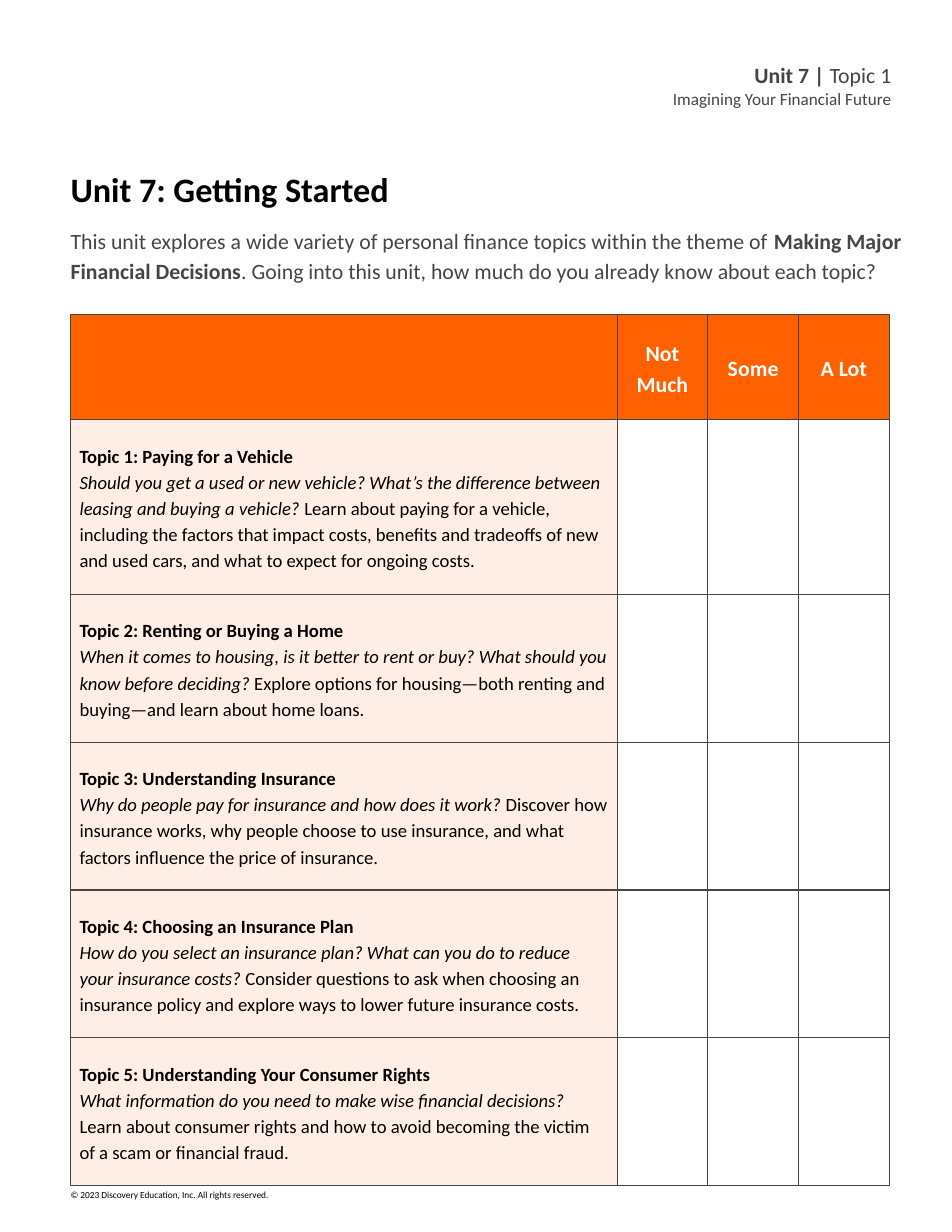
from lxml import etree
from pptx import Presentation
from pptx.dml.color import RGBColor
from pptx.enum.text import MSO_ANCHOR, PP_ALIGN
from pptx.oxml.ns import qn
from pptx.util import Inches, Pt

LEFT, RIGHT, CENTER = PP_ALIGN.LEFT, PP_ALIGN.RIGHT, PP_ALIGN.CENTER
JUSTIFY = PP_ALIGN.JUSTIFY
TOP, MIDDLE = MSO_ANCHOR.TOP, MSO_ANCHOR.MIDDLE

FONT = "Calibri"
GRAY, BLACK, WHITE, ORANGE = "454545", "000000", "FFFFFF", "FF6000"
MARGIN = 0.63
SPACING = 1.15

RATINGS = ["Not Much", "Some", "A Lot"]
TOPICS = [
    ("Paying for a Vehicle",
     "Should you get a used or new vehicle? What’s the difference between "
     "leasing and buying a vehicle? ",
     "Learn about paying for a vehicle, including the factors that impact "
     "costs, benefits and tradeoffs of new and used cars, and what to expect "
     "for ongoing costs."),
    ("Renting or Buying a Home",
     "When it comes to housing, is it better to rent or buy? What should you "
     "know before deciding? ",
     "Explore options for housing—both renting and buying—and learn about "
     "home loans."),
    ("Understanding Insurance",
     "Why do people pay for insurance and how does it work? ",
     "Discover how insurance works, why people choose to use insurance, and "
     "what factors influence the price of insurance."),
    ("Choosing an Insurance Plan",
     "How do you select an insurance plan? What can you do to reduce your "
     "insurance costs? ",
     "Consider questions to ask when choosing an insurance policy and explore "
     "ways to lower future insurance costs."),
    ("Understanding Your Consumer Rights",
     "What information do you need to make wise financial decisions? ",
     "Learn about consumer rights and how to avoid becoming the victim of a "
     "scam or financial fraud."),
]


def color(code):
    return RGBColor.from_string(code)


def add_run(para, text, size, code, bold=False, italic=False):
    run = para.add_run()
    run.text = text
    font = run.font
    font.name, font.size = FONT, Pt(size)
    font.bold, font.italic = bold, italic
    font.color.rgb = color(code)


def add_frame(slide, box, anchor=TOP):
    frame = slide.shapes.add_textbox(*map(Inches, box)).text_frame
    frame.word_wrap = True
    frame.vertical_anchor = anchor
    frame.margin_left = frame.margin_right = 0
    frame.margin_top = frame.margin_bottom = 0
    return frame


def set_para(para, align=LEFT, spacing=None):
    para.alignment = align
    para.line_spacing = spacing
    return para


def add_header(slide, box):
    frame = add_frame(slide, box, MIDDLE)
    unit = set_para(frame.paragraphs[0], RIGHT)
    add_run(unit, "Unit 7 | ", 14, GRAY, bold=True)
    add_run(unit, "Topic 1", 14, GRAY)
    name = set_para(frame.add_paragraph(), RIGHT)
    add_run(name, "Imagining Your Financial Future", 11, GRAY)


def add_title(slide, box):
    para = add_frame(slide, box).paragraphs[0]
    add_run(para, "Unit 7: Getting Started", 22, BLACK, bold=True)


def add_intro(slide, box):
    para = set_para(add_frame(slide, box).paragraphs[0], spacing=SPACING)
    para.space_after = Pt(12)
    add_run(para, "This unit explores a wide variety of personal finance "
            "topics within the theme of ", 14, GRAY)
    add_run(para, "Making Major Financial Decisions", 14, GRAY, bold=True)
    add_run(para, ". Going into this unit, how much do you already know about "
            "each topic?", 14, GRAY)


def add_footer(slide, box):
    para = set_para(add_frame(slide, box).paragraphs[0], JUSTIFY, SPACING)
    add_run(para, "© 2023 Discovery Education, Inc. All rights reserved.",
            6, BLACK)


def add_borders(cell):
    props = cell._tc.get_or_add_tcPr()
    for side in ("a:lnL", "a:lnR", "a:lnT", "a:lnB"):
        line = etree.SubElement(props, qn(side), w=str(Pt(0.75)))
        fill = etree.SubElement(line, qn("a:solidFill"))
        etree.SubElement(fill, qn("a:srgbClr"), val=GRAY)


def fill_cell(cell, code, alpha=None):
    """Fill a cell; alpha is its opacity in percent."""
    cell.fill.solid()
    cell.fill.fore_color.rgb = color(code)
    if alpha:
        tint = cell._tc.tcPr.find(qn("a:solidFill")).find(qn("a:srgbClr"))
        etree.SubElement(tint, qn("a:alpha"), val=str(alpha * 1000))


def pad_cell(cell):
    cell.margin_left = cell.margin_right = Inches(0.08)
    cell.margin_top = cell.margin_bottom = Inches(0.2)


def add_topic(cell, num, name, ask, text):
    pad_cell(cell)
    frame = cell.text_frame
    head = set_para(frame.paragraphs[0], spacing=SPACING)
    add_run(head, f"Topic {num}: {name}", 12, BLACK, bold=True)
    para = set_para(frame.add_paragraph(), spacing=SPACING)
    add_run(para, ask, 12, BLACK, italic=True)
    add_run(para, text, 12, BLACK)


def add_survey(slide, left, top):
    widths = [4.88] + [0.81] * len(RATINGS)
    heights = [0.93, 1.56] + [1.32] * (len(TOPICS) - 1)
    box = (left, top, sum(widths), sum(heights))
    table = slide.shapes.add_table(
        len(heights), len(widths), *map(Inches, box)).table
    table.first_row = table.horz_banding = False
    for col, width in zip(table.columns, widths):
        col.width = Inches(width)
    for row, height in zip(table.rows, heights):
        row.height = Inches(height)
    for cell in table.iter_cells():
        add_borders(cell)
        cell.fill.background()

    for col in range(len(widths)):
        fill_cell(table.cell(0, col), ORANGE)
    for col, label in enumerate(RATINGS, 1):
        cell = table.cell(0, col)
        pad_cell(cell)
        cell.vertical_anchor = MIDDLE
        para = set_para(cell.text_frame.paragraphs[0], CENTER, SPACING)
        add_run(para, label, 14, WHITE, bold=True)
    for num, topic in enumerate(TOPICS, 1):
        cell = table.cell(num, 0)
        fill_cell(cell, ORANGE, alpha=10)
        add_topic(cell, num, *topic)


def main():
    deck = Presentation()
    deck.slide_width, deck.slide_height = Inches(8.5), Inches(11)
    slide = deck.slides.add_slide(deck.slide_layouts[6])
    add_header(slide, (3.93, 0.55, 4.03, 0.42))
    add_footer(slide, (MARGIN, 10.6, 3.4, 0.1))
    add_title(slide, (MARGIN, 1.5, 7.25, 0.36))
    add_survey(slide, MARGIN, 2.81)
    add_intro(slide, (MARGIN, 2, 7.44, 0.81))
    deck.save("out.pptx")


if __name__ == "__main__":
    main()
